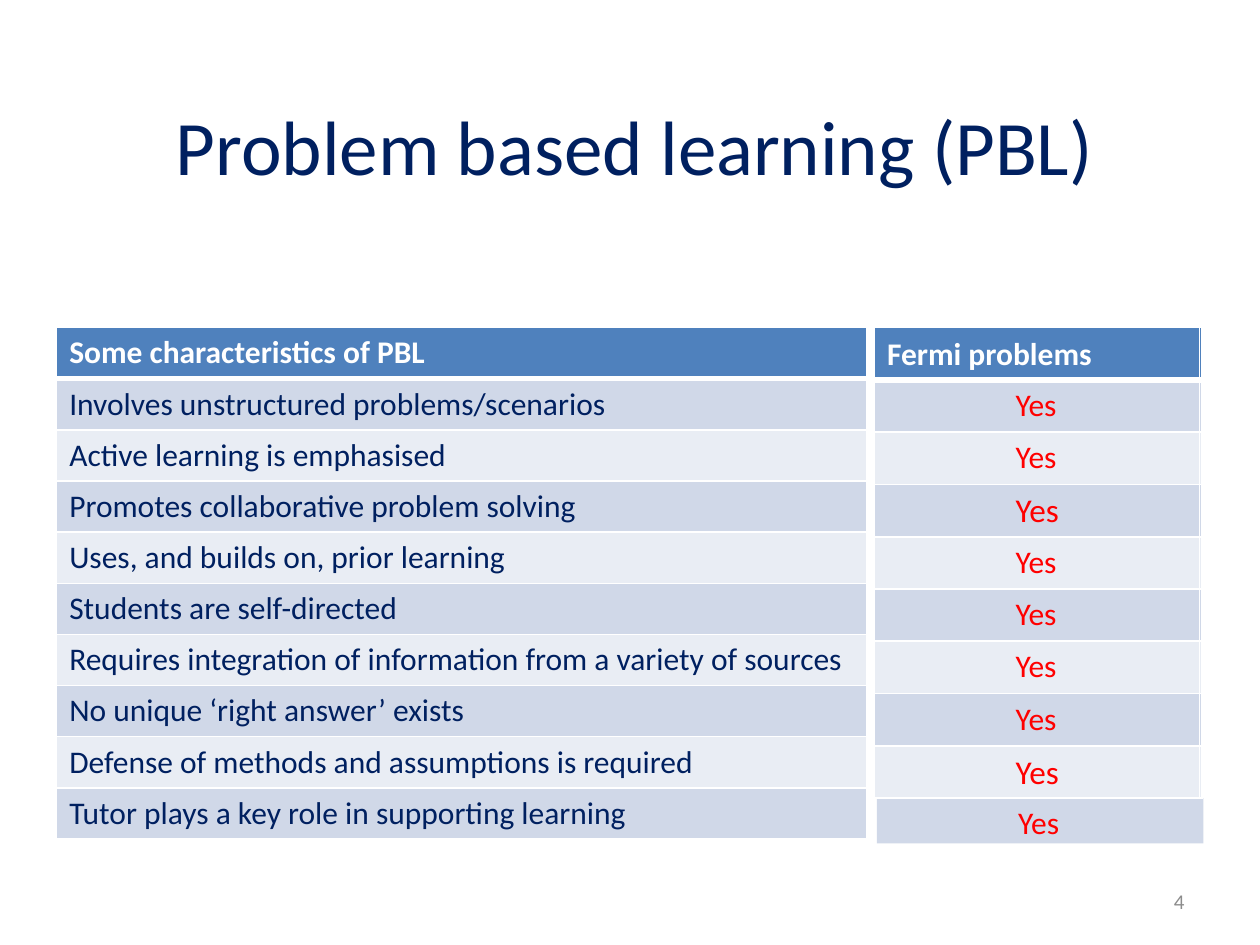
from lxml import etree
from pptx import Presentation
from pptx.dml.color import RGBColor
from pptx.enum.shapes import MSO_CONNECTOR, MSO_SHAPE
from pptx.enum.text import MSO_ANCHOR, PP_ALIGN
from pptx.oxml.ns import qn
from pptx.util import Inches, Pt

RECTANGLE = MSO_SHAPE.RECTANGLE
STRAIGHT = MSO_CONNECTOR.STRAIGHT
LEFT, CENTER, RIGHT = PP_ALIGN.LEFT, PP_ALIGN.CENTER, PP_ALIGN.RIGHT
TOP, MIDDLE = MSO_ANCHOR.TOP, MSO_ANCHOR.MIDDLE

WHITE = RGBColor(0xFF, 0xFF, 0xFF)
NAVY = RGBColor(0x00, 0x20, 0x60)
RED = RGBColor(0xFF, 0x00, 0x00)
GRAY = RGBColor(0x8C, 0x8C, 0x8C)
HEADER_BLUE = RGBColor(0x4F, 0x81, 0xBD)
BANDS = (RGBColor(0xD0, 0xD8, 0xE8), RGBColor(0xE9, 0xED, 0xF4))

CHARACTERISTICS = [
    "Involves unstructured problems/scenarios",
    "Active learning is emphasised",
    "Promotes collaborative problem solving",
    "Uses, and builds on, prior learning",
    "Students are self-directed",
    "Requires integration of information from a variety of sources",
    "No unique ‘right answer’ exists",
    "Defense of methods and assumptions is required",
    "Tutor plays a key role in supporting learning",
]
LARGER_ANSWERS = (3, 8)
TABLE_TOP = 2.6
ANSWER_PITCH = 0.415


def row_fill(row):
    return BANDS[(row - 1) % 2] if row else HEADER_BLUE


def answer_top(row):
    return TABLE_TOP + row * ANSWER_PITCH


class SlideBuilder:
    font_name = "Calibri"

    def __init__(self, slide):
        self.slide = slide

    def add_styled_run(self, paragraph, text, size, color, bold=False, align=LEFT):
        paragraph.alignment = align
        run = paragraph.add_run()
        run.text = text
        font_format = {"name": self.font_name, "size": Pt(size), "bold": bold}
        for name, value in font_format.items():
            setattr(run.font, name, value)
        run.font.color.rgb = color

    def text(self, box, text, size, color, anchor=TOP, margins=(0, 0), wrap=True, **style):
        shape = self.slide.shapes.add_textbox(*map(Inches, box))
        side, edge = map(Inches, margins)
        frame_format = {
            "word_wrap": wrap, "vertical_anchor": anchor,
            "margin_left": side, "margin_right": side,
            "margin_top": edge, "margin_bottom": edge,
        }
        for name, value in frame_format.items():
            setattr(shape.text_frame, name, value)
        self.add_styled_run(shape.text_frame.paragraphs[0], text, size, color, **style)

    def rectangle(self, box, color):
        shape = self.slide.shapes.add_shape(RECTANGLE, *map(Inches, box))
        shape.shadow.inherit = False
        shape.fill.solid()
        shape.fill.fore_color.rgb = color
        shape.line.fill.background()

    def line(self, start, end, width=1):
        connector = self.slide.shapes.add_connector(STRAIGHT, *map(Inches, start + end))
        connector.line.color.rgb = WHITE
        connector.line.width = Pt(width)
        properties = connector._element.find(qn("p:spPr"))
        etree.SubElement(properties, qn("a:effectLst"))

    def border(self, cell, side, width):
        properties = cell._tc.get_or_add_tcPr()
        line = etree.SubElement(properties, qn(f"a:ln{side}"), w=str(Pt(width)))
        fill = etree.SubElement(line, qn("a:solidFill"))
        etree.SubElement(fill, qn("a:srgbClr"), val=str(WHITE))

    def table(self, box, texts):
        table = self.slide.shapes.add_table(len(texts), 1, *map(Inches, box)).table
        for row, text in enumerate(texts):
            cell = table.cell(row, 0)
            widths = {"L": 1, "R": 1, "T": 3 if row == 1 else 1, "B": 1 if row else 3}
            for side, width in widths.items():
                self.border(cell, side, width)
            cell.fill.solid()
            cell.fill.fore_color.rgb = row_fill(row)
            color = NAVY if row else WHITE
            self.add_styled_run(cell.text_frame.paragraphs[0], text, 18, color, bold=row == 0)

    def answer_column(self, last_row):
        """Draw the header and answers; the last row sits slightly to the right."""
        left, width, shift = 6.94, 2.59, 0.02
        right = left + width
        for row in range(last_row):
            self.rectangle((left, answer_top(row), width, ANSWER_PITCH), row_fill(row))
        bottom = answer_top(last_row)
        for row in range(last_row + 1):
            top = answer_top(row)
            self.line((left - 0.01, top), (right, top), 3.13 if row == 1 else 1)
        for x in (left, right - 0.01):
            self.line((x, TABLE_TOP), (x, bottom))

        self.rectangle((left + shift, bottom, width, 0.36), row_fill(last_row))
        for y in (bottom, bottom + 0.41):
            self.line((left + shift - 0.01, y), (right + shift, y))

        self.text((7.04, TABLE_TOP + 0.05, 1.88, 0.3), "Fermi problems", 18, WHITE,
                  wrap=False, bold=True)
        for row in range(1, last_row + 1):
            x = 8.06 + (shift if row == last_row else 0)
            size = 19 if row in LARGER_ANSWERS else 18
            self.text((x, answer_top(row) + 0.04, 0.51, 0.3), "Yes", size, RED, wrap=False)


def main():
    presentation = Presentation()
    presentation.slide_width = Inches(10)
    presentation.slide_height = Inches(7.5)
    builder = SlideBuilder(presentation.slides.add_slide(presentation.slide_layouts[6]))

    framed = {"anchor": MIDDLE, "margins": (0.1, 0.05)}
    builder.text((0.54, 0.52, 9, 1.25), "Problem based learning (PBL)", 44, NAVY,
                 align=CENTER, **framed)
    builder.text((7.17, 6.95, 2.33, 0.4), "4", 12, GRAY, align=RIGHT, **framed)
    builder.table((0.45, TABLE_TOP, 6.43, 4.06),
                  ["Some characteristics of PBL"] + CHARACTERISTICS)
    builder.answer_column(len(CHARACTERISTICS))
    presentation.save("out.pptx")


if __name__ == "__main__":
    main()
